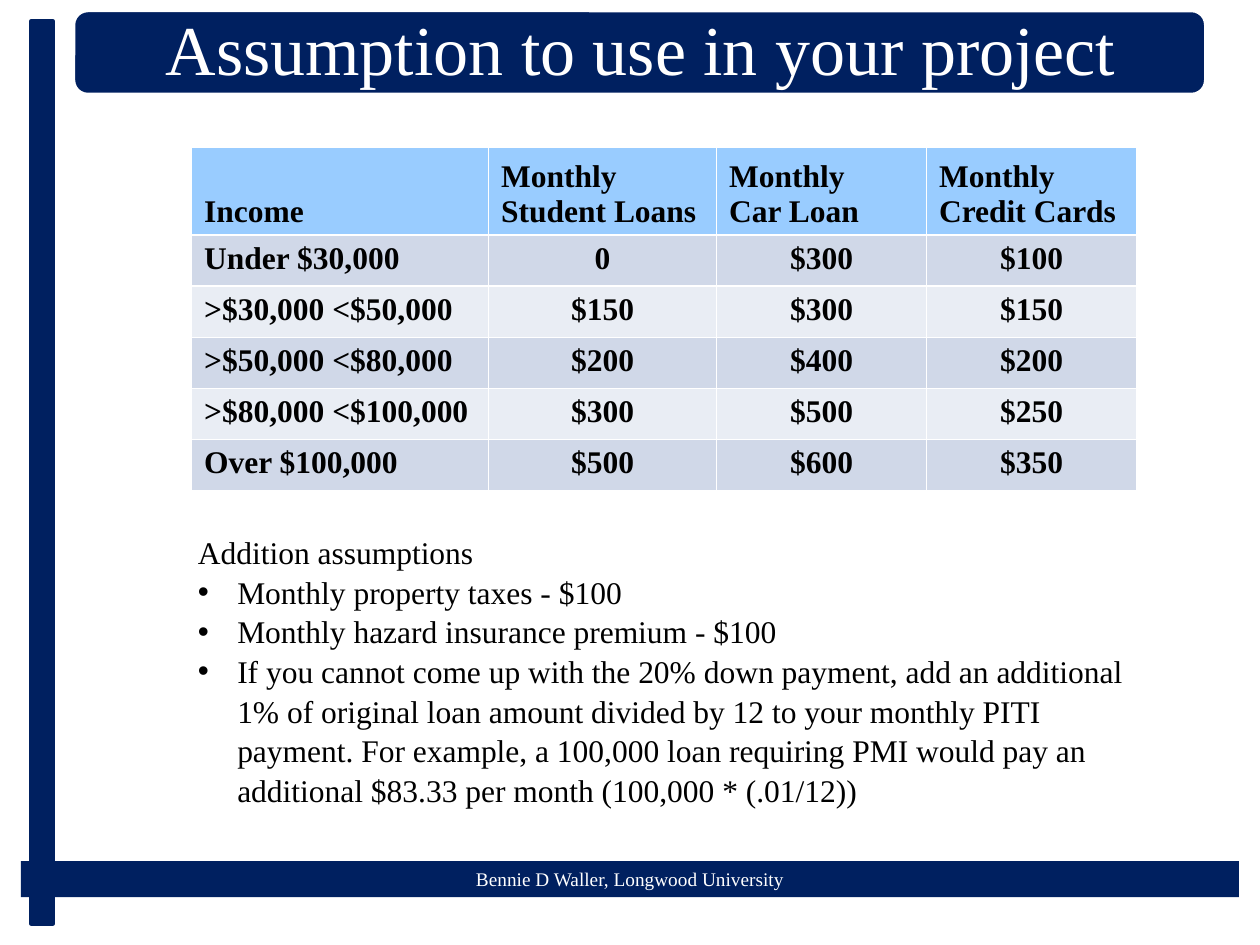
from dataclasses import dataclass
from typing import Optional

from lxml import etree
from pptx import Presentation
from pptx.dml.color import RGBColor
from pptx.enum import shapes, text
from pptx.oxml.ns import qn
from pptx.util import Pt


@dataclass(frozen=True)
class Theme:
    font: str = "Times New Roman"
    navy: str = "002060"
    white: str = "FFFFFF"
    black: str = "000000"
    header: str = "99CCFF"
    bands: tuple = ("D0D8E8", "E9EDF4")
    title_size: float = 40
    body_size: float = 18
    footer_size: float = 11


@dataclass(frozen=True)
class Box:
    left: float
    top: float
    width: float
    height: float

    def lengths(self) -> tuple:
        return Pt(self.left), Pt(self.top), Pt(self.width), Pt(self.height)


@dataclass(frozen=True)
class Panel:
    box: Box
    kind: int
    line: Optional[str] = None
    line_width: float = 0
    rounding: Optional[float] = None


@dataclass(frozen=True)
class IncomeBand:
    income: str
    student_loans: str
    car_loan: str
    credit_cards: str


THEME = Theme()
SHAPE = shapes.MSO_SHAPE
ALIGN = text.PP_ALIGN
ANCHOR = text.MSO_ANCHOR

FOOTER = Panel(Box(12, 492, 696, 20.6), SHAPE.RECTANGLE)
SIDE_BAR = Panel(Box(18, 12, 12, 516), SHAPE.RECTANGLE, THEME.navy, 2.5)
BANNER = Panel(Box(42, 6, 647, 48), SHAPE.ROUNDED_RECTANGLE, THEME.white, 2, 0.17)
TITLE_BOX = Box(44.5, 8.5, 643, 43)
TABLE_BOX = Box(109.5, 84.4, 540, 196)
NOTES_BOX = Box(106, 300, 552, 160)

COLUMN_WIDTHS = (169.7, 130.3, 120, 120)
HEADER_HEIGHT = 50
ROW_HEIGHT = 29.2
HEADINGS = ("Income", "Monthly\nStudent Loans", "Monthly\nCar Loan", "Monthly\nCredit Cards")
INCOME_BANDS = (
    IncomeBand("Under $30,000", "0", "$300", "$100"),
    IncomeBand(">$30,000 <$50,000", "$150", "$300", "$150"),
    IncomeBand(">$50,000 <$80,000", "$200", "$400", "$200"),
    IncomeBand(">$80,000 <$100,000", "$300", "$500", "$250"),
    IncomeBand("Over $100,000", "$500", "$600", "$350"),
)
NOTES_HEADING = "Addition assumptions"
ASSUMPTIONS = (
    "Monthly property taxes - $100",
    "Monthly hazard insurance premium - $100",
    "If you cannot come up with the 20% down payment, add an additional 1% of original "
    "loan amount divided by 12 to your monthly PITI payment. For example, a 100,000 loan "
    "requiring PMI would pay an additional $83.33 per month (100,000 * (.01/12))",
)


def write(frame, content: str, *, size: float = THEME.body_size, color: str = THEME.black,
          bold: bool = False, align=ALIGN.LEFT, anchor=None, spacing: Optional[float] = None) -> None:
    frame.text = content
    if anchor is not None:
        frame.vertical_anchor = anchor
    for paragraph in frame.paragraphs:
        paragraph.alignment = align
        paragraph.line_spacing = spacing
        for run in paragraph.runs:
            run.font.name = THEME.font
            run.font.size = Pt(size)
            run.font.bold = bold
            run.font.color.rgb = RGBColor.from_string(color)


def add_bullet(paragraph, indent: float = 22.5) -> None:
    properties = paragraph._p.get_or_add_pPr()
    properties.set("marL", str(Pt(indent)))
    properties.set("indent", str(-Pt(indent)))
    etree.SubElement(properties, qn("a:buFont"), typeface="Arial")
    etree.SubElement(properties, qn("a:buChar"), char="•")


def draw_panel(slide, panel: Panel):
    shape = slide.shapes.add_shape(panel.kind, *panel.box.lengths())
    shape.shadow.inherit = False
    shape.fill.solid()
    shape.fill.fore_color.rgb = RGBColor.from_string(THEME.navy)
    if panel.line is None:
        shape.line.fill.background()
    else:
        shape.line.color.rgb = RGBColor.from_string(panel.line)
        shape.line.width = Pt(panel.line_width)
    if panel.rounding is not None:
        shape.adjustments[0] = panel.rounding
    return shape


def draw_title(slide, banner) -> None:
    title = slide.shapes.title
    title.left, title.top, title.width, title.height = TITLE_BOX.lengths()
    banner.element.addnext(title.element)
    frame = title.text_frame
    frame.margin_left = frame.margin_right = Pt(12)
    frame.margin_top = frame.margin_bottom = Pt(6)
    write(frame, "Assumption to use in your project", size=THEME.title_size, color=THEME.white,
          align=ALIGN.CENTER, anchor=ANCHOR.MIDDLE, spacing=0.9)


def fill_cell(cell, color: str) -> None:
    cell.fill.solid()
    cell.fill.fore_color.rgb = RGBColor.from_string(color)


def draw_table(slide) -> None:
    table = slide.shapes.add_table(len(INCOME_BANDS) + 1, len(HEADINGS), *TABLE_BOX.lengths()).table
    for column, width in zip(table.columns, COLUMN_WIDTHS):
        column.width = Pt(width)
    for row in table.rows:
        row.height = Pt(ROW_HEIGHT)
    table.rows[0].height = Pt(HEADER_HEIGHT)
    for index, heading in enumerate(HEADINGS):
        cell = table.cell(0, index)
        fill_cell(cell, THEME.header)
        cell.vertical_anchor = ANCHOR.BOTTOM
        write(cell.text_frame, heading, bold=True)
    for number, band in enumerate(INCOME_BANDS):
        values = (band.income, band.student_loans, band.car_loan, band.credit_cards)
        for index, value in enumerate(values):
            cell = table.cell(number + 1, index)
            fill_cell(cell, THEME.bands[number % 2])
            write(cell.text_frame, value, bold=True, align=ALIGN.CENTER if index else ALIGN.LEFT)


def draw_notes(slide) -> None:
    frame = slide.shapes.add_textbox(*NOTES_BOX.lengths()).text_frame
    frame.word_wrap = True
    write(frame, "\n".join((NOTES_HEADING, *ASSUMPTIONS)), spacing=1.05)
    for paragraph in frame.paragraphs[1:]:
        add_bullet(paragraph)


def main() -> None:
    presentation = Presentation()
    presentation.slide_width, presentation.slide_height = Pt(720), Pt(540)
    slide = presentation.slides.add_slide(presentation.slide_layouts[5])
    footer = draw_panel(slide, FOOTER)
    write(footer.text_frame, "Bennie D Waller, Longwood University", size=THEME.footer_size,
          color=THEME.white, align=ALIGN.CENTER, anchor=ANCHOR.MIDDLE)
    draw_panel(slide, SIDE_BAR)
    draw_title(slide, draw_panel(slide, BANNER))
    draw_table(slide)
    draw_notes(slide)
    presentation.save("out.pptx")


if __name__ == "__main__":
    main()
